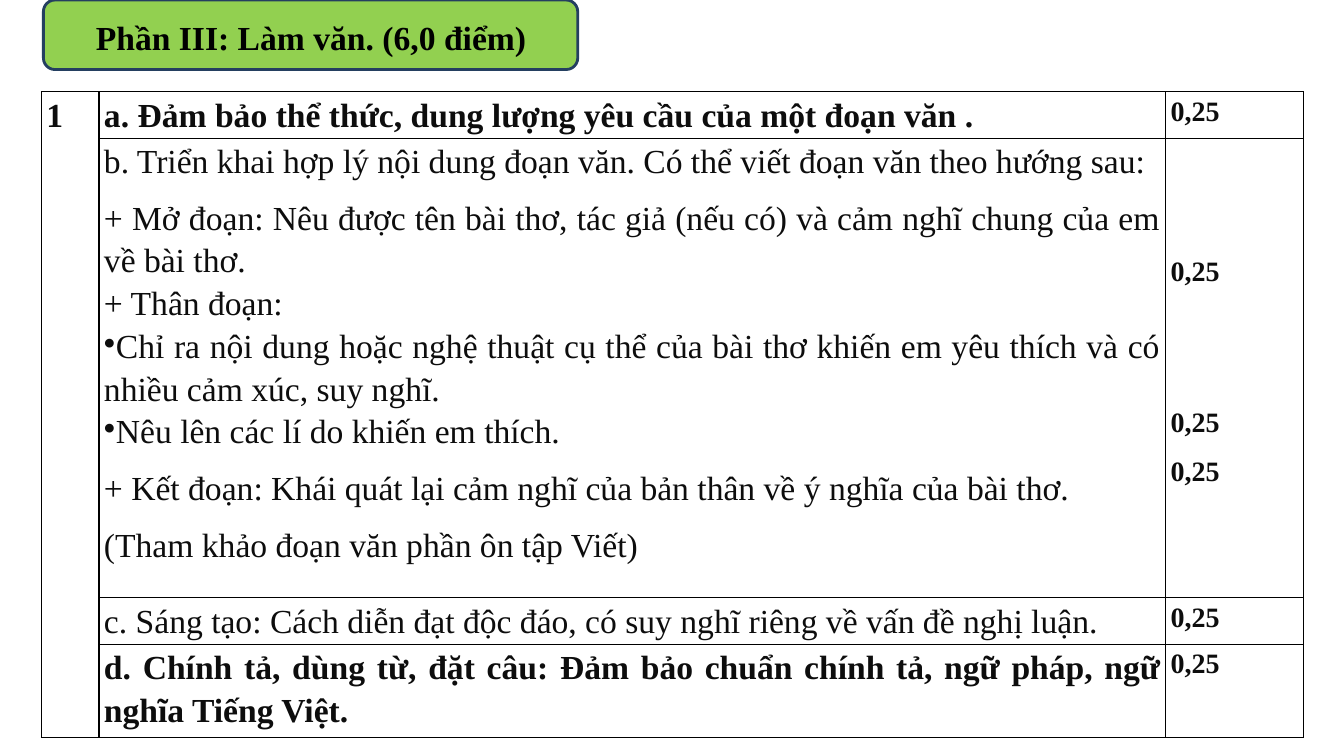
from dataclasses import dataclass

from lxml.etree import SubElement
from pptx import Presentation
from pptx.dml.color import RGBColor
from pptx.enum.shapes import MSO_SHAPE
from pptx.enum.text import MSO_ANCHOR, MSO_AUTO_SIZE, PP_ALIGN
from pptx.oxml import parse_xml
from pptx.oxml.ns import nsdecls, qn
from pptx.util import Inches, Pt

COLORS = {
    "badge": "92D050", "badge_line": "243F60", "heading": "000000",
    "ink": "0D0D0D", "cell": "FFFFFF", "border": "000000",
}
FONT = "Times New Roman"
SLIDE_WIDTH, SLIDE_HEIGHT = Inches(13.33), Inches(7.5)

# Percent of the slide's width and height
COLUMN_SHARES = (4.28, 79.37, 10.28)
ROW_SHARES = (6, 60.8, 6.13, 12.4)


@dataclass(frozen=True)
class Area:
    """A box in percent of the slide's size."""
    left: float
    top: float
    width: float
    height: float

    def box(self) -> tuple[int, int, int, int]:
        return (across(self.left), down(self.top),
                across(self.width), down(self.height))


@dataclass(frozen=True)
class Line:
    text: str
    size: float = 24
    bold: bool = False
    before: float = 0
    after: float = 10
    bullet: bool = False
    color: str = "ink"


@dataclass(frozen=True)
class Criterion:
    guidance: tuple[Line, ...]
    scores: tuple[Line, ...]
    scores_top: float = 0


def score(before: float = 0) -> Line:
    return Line("0,25", size=20, bold=True, before=before)


CRITERIA = (
    Criterion((Line("a. Đảm bảo thể thức, dung lượng yêu cầu của một đoạn văn .", bold=True),),
              (score(),)),
    Criterion((
        Line("b. Triển khai hợp lý nội dung đoạn văn. Có thể viết đoạn văn theo hướng sau:"),
        Line("+ Mở đoạn: Nêu được tên bài thơ, tác giả (nếu có) và cảm nghĩ chung "
             "của em về bài thơ.", after=0),
        Line("+ Thân đoạn:", after=0),
        Line("Chỉ ra nội dung hoặc nghệ thuật cụ thể của bài thơ khiến em yêu thích "
             "và có nhiều cảm xúc, suy nghĩ.", after=0, bullet=True),
        Line("Nêu lên các lí do khiến em thích.", bullet=True),
        Line("+ Kết đoạn: Khái quát lại cảm nghĩ của bản thân về ý nghĩa của bài thơ."),
        Line("(Tham khảo đoạn văn phần ôn tập Viết)"),
    ), (score(), score(before=72), score()), scores_top=15.07),
    Criterion((Line("c. Sáng tạo: Cách diễn đạt độc đáo, có suy nghĩ riêng về vấn đề nghị luận."),),
              (score(),)),
    Criterion((Line("d. Chính tả, dùng từ, đặt câu: Đảm bảo chuẩn chính tả, ngữ pháp, "
                    "ngữ nghĩa Tiếng Việt.", bold=True),),
              (score(),)),
)


def across(percent: float) -> int:
    return round(SLIDE_WIDTH * percent / 100)


def down(percent: float) -> int:
    return round(SLIDE_HEIGHT * percent / 100)


def rgb(name: str) -> RGBColor:
    return RGBColor.from_string(COLORS[name])


def write(frame, lines: tuple[Line, ...]) -> None:
    for index, line in enumerate(lines):
        paragraph = frame.add_paragraph() if index else frame.paragraphs[0]
        paragraph.alignment = PP_ALIGN.JUSTIFY
        paragraph.line_spacing = 1.15
        paragraph.space_before = Pt(line.before)
        paragraph.space_after = Pt(line.after)
        run = paragraph.add_run()
        run.text = line.text
        run.font.name = FONT
        run.font.size = Pt(line.size)
        run.font.bold = line.bold
        run.font.color.rgb = rgb(line.color)
        if line.bullet:
            properties = paragraph._p.get_or_add_pPr()
            SubElement(properties, qn("a:buChar")).set("char", "•")


def style_cell(cell) -> None:
    """Give a cell its fill, thin margins and a border on each side."""
    cell.fill.solid()
    cell.fill.fore_color.rgb = rgb("cell")
    cell.margin_left = cell.margin_right = Inches(0.05)
    cell.margin_top = cell.margin_bottom = 0
    properties = cell._tc.get_or_add_tcPr()
    for position, side in enumerate(("lnL", "lnR", "lnT", "lnB")):
        properties.insert(position, parse_xml(
            f'<a:{side} {nsdecls("a")} w="12700"><a:solidFill>'
            f'<a:srgbClr val="{COLORS["border"]}"/></a:solidFill></a:{side}>'))


def add_heading(slide) -> None:
    badge = slide.shapes.add_shape(
        MSO_SHAPE.ROUNDED_RECTANGLE, *Area(3.23, 0, 39.76, 9.2).box())
    badge.shadow.inherit = False
    badge.fill.solid()
    badge.fill.fore_color.rgb = rgb("badge")
    badge.line.color.rgb = rgb("badge_line")
    badge.line.width = Pt(2)

    heading = slide.shapes.title
    heading.left, heading.top, heading.width, heading.height = Area(6.38, 0.8, 49.96, 7.07).box()
    frame = heading.text_frame
    frame.word_wrap = True
    frame.auto_size = MSO_AUTO_SIZE.SHAPE_TO_FIT_TEXT
    frame.vertical_anchor = MSO_ANCHOR.TOP
    write(frame, (Line("Phần III: Làm văn. (6,0 điểm)", bold=True, color="heading"),))
    badge.element.addnext(heading.element)


def add_rubric(slide) -> None:
    area = Area(3.08, 12.13, sum(COLUMN_SHARES), sum(ROW_SHARES))
    rubric = slide.shapes.add_table(len(ROW_SHARES), len(COLUMN_SHARES), *area.box()).table
    rubric.first_row = rubric.horz_banding = False
    for column, share in zip(rubric.columns, COLUMN_SHARES):
        column.width = across(share)
    for row, share in zip(rubric.rows, ROW_SHARES):
        row.height = down(share)
    for cell in rubric.iter_cells():
        style_cell(cell)

    question = rubric.cell(0, 0)
    question.merge(rubric.cell(len(ROW_SHARES) - 1, 0))
    write(question.text_frame, (Line("1", bold=True),))
    for index, criterion in enumerate(CRITERIA):
        write(rubric.cell(index, 1).text_frame, criterion.guidance)
        points = rubric.cell(index, 2)
        points.margin_top = down(criterion.scores_top)
        write(points.text_frame, criterion.scores)


def main() -> None:
    deck = Presentation()
    deck.slide_width, deck.slide_height = SLIDE_WIDTH, SLIDE_HEIGHT
    slide = deck.slides.add_slide(deck.slide_layouts[5])
    add_heading(slide)
    add_rubric(slide)
    deck.save("out.pptx")


if __name__ == "__main__":
    main()
